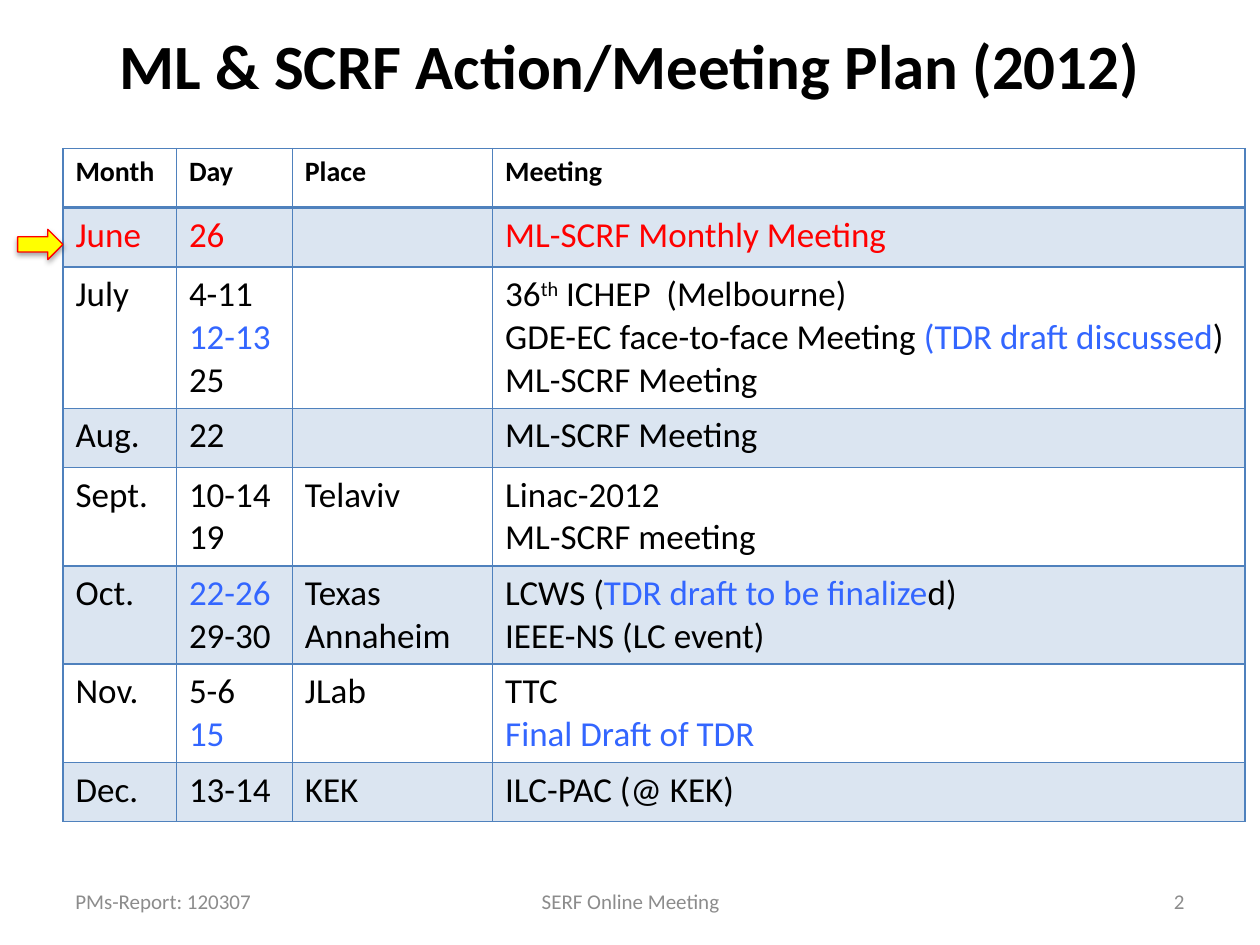
from lxml.etree import SubElement
from pptx import Presentation
from pptx.dml.color import RGBColor
from pptx.enum.shapes import MSO_SHAPE
from pptx.enum.text import MSO_ANCHOR, PP_ALIGN
from pptx.oxml import parse_xml
from pptx.oxml.ns import nsdecls, qn
from pptx.util import Inches, Pt

BLACK = RGBColor(0x00, 0x00, 0x00)
GRAY = RGBColor(0x8C, 0x8C, 0x8C)
RED = RGBColor(0xFF, 0x00, 0x00)
YELLOW = RGBColor(0xFF, 0xFF, 0x00)
HIGHLIGHT = RGBColor(0x33, 0x66, 0xFF)
TABLE_BLUE = RGBColor(0x4F, 0x81, 0xBD)

COLUMN_WIDTHS = [0.9, 0.92, 1.59, 5.97]
ROW_HEIGHT = 0.47


def blue(text):
    """Return a highlighted span."""
    return text, {"color": HIGHLIGHT}


HEADER = ["Month", "Day", "Place", "Meeting"]
CURRENT = ["June", "26", "", "ML-SCRF Monthly Meeting"]
UPCOMING = [
    ["July", ["4-11", [blue("12-13")], "25"], "",
     [["36", ("th", {"baseline": 30}), " ICHEP  (Melbourne)"],
      ["GDE-EC face-to-face Meeting ", blue("(TDR draft discussed"), ")"],
      "ML-SCRF Meeting"]],
    ["Aug.", "22", "", "ML-SCRF Meeting"],
    ["Sept.", ["10-14", "19"], "Telaviv", ["Linac-2012", "ML-SCRF meeting"]],
    ["Oct.", [[blue("22-26")], "29-30"], ["Texas", "Annaheim"],
     [["LCWS (", blue("TDR draft to be finalize"), "d)"], "IEEE-NS (LC event)"]],
    ["Nov.", ["5-6", [blue("15")]], "JLab", ["TTC", [blue("Final Draft of TDR")]]],
    ["Dec.", "13-14", "KEK", "ILC-PAC (@ KEK)"],
]


def write(frame, text, align=PP_ALIGN.LEFT, **style):
    """Write a string, or a list of paragraphs made of spans, into a text frame."""
    lines = [text] if isinstance(text, str) else text
    for index, line in enumerate(lines):
        para = frame.paragraphs[0] if index == 0 else frame.add_paragraph()
        para.alignment = align
        for item in [line] if isinstance(line, str) else line:
            words, changes = (item, {}) if isinstance(item, str) else item
            format_span(para.add_run(), words, **{**style, **changes})


def format_span(span, words, size=20, color=BLACK, bold=False, baseline=0, name="Calibri"):
    """Give one run its words and character format."""
    span.text = words
    span.font.name = name
    span.font.size = Pt(size)
    span.font.bold = bold
    span.font.color.rgb = color
    if baseline:
        span.font._element.set("baseline", str(baseline * 1000))


class SlideBuilder:
    """Holds the current slide and adds each kind of element to it."""

    def __init__(self, deck):
        """Start a slide with the title-only layout."""
        self.slide = deck.slides.add_slide(deck.slide_layouts[5])

    def title(self, text, left, top, width, height):
        """Place and fill the title placeholder."""
        box = self.slide.shapes.title
        box.left, box.top = Inches(left), Inches(top)
        box.width, box.height = Inches(width), Inches(height)
        box.text_frame.vertical_anchor = MSO_ANCHOR.MIDDLE
        write(box.text_frame, text, PP_ALIGN.CENTER, size=36, bold=True)

    def footer(self, text, left, width, align):
        """Add one footer text box."""
        box = self.slide.shapes.add_textbox(Inches(left), Inches(6.95), Inches(width), Inches(0.4))
        box.text_frame.word_wrap = True
        box.text_frame.vertical_anchor = MSO_ANCHOR.MIDDLE
        write(box.text_frame, text, align, size=12, color=GRAY)

    def borders(self, cell, top=1, bottom=1):
        """Draw the four borders of a table cell."""
        properties = cell._tc.get_or_add_tcPr()
        widths = {"lnL": 1, "lnR": 1, "lnT": top, "lnB": bottom}
        for index, (side, points) in enumerate(widths.items()):
            properties.insert(index, parse_xml(
                f'<a:{side} {nsdecls("a")} w="{Pt(points)}"><a:solidFill>'
                f'<a:srgbClr val="{TABLE_BLUE}"/></a:solidFill></a:{side}>'))

    def table(self, rows, styles, left, top):
        """Add the plan table with tinted alternate rows."""
        frame = self.slide.shapes.add_table(
            len(rows), len(COLUMN_WIDTHS), Inches(left), Inches(top),
            Inches(sum(COLUMN_WIDTHS)), Inches(ROW_HEIGHT * len(rows)))
        table = frame.table
        table.horz_banding = table.first_row = False
        for column, width in zip(table.columns, COLUMN_WIDTHS):
            column.width = Inches(width)
        for row_index, (row, style) in enumerate(zip(rows, styles)):
            table.rows[row_index].height = Inches(ROW_HEIGHT)
            for cell, text in zip(table.rows[row_index].cells, row):
                self.borders(cell, 2 if row_index == 1 else 1, 2 if row_index == 0 else 1)
                if row_index % 2:
                    self.tint(cell)
                else:
                    cell.fill.background()
                if text:
                    write(cell.text_frame, text, **style)

    def tint(self, cell):
        """Fill a cell with transparent blue."""
        cell.fill.solid()
        cell.fill.fore_color.rgb = TABLE_BLUE
        color = cell._tc.tcPr.find(qn("a:solidFill")).find(qn("a:srgbClr"))
        SubElement(color, qn("a:alpha")).set("val", "20000")

    def arrow(self, left, top, width, height):
        """Add the marker arrow with its soft shadow."""
        arrow = self.slide.shapes.add_shape(
            MSO_SHAPE.RIGHT_ARROW, Inches(left), Inches(top), Inches(width), Inches(height))
        arrow.fill.solid()
        arrow.fill.fore_color.rgb = YELLOW
        arrow.line.color.rgb = RED
        arrow.line.width = Pt(0.75)
        arrow.shadow.inherit = False
        effects = arrow._element.spPr.find(qn("a:effectLst"))
        effects.append(parse_xml(
            f'<a:outerShdw {nsdecls("a")} blurRad="{Pt(3.1)}" dist="{Pt(1.8)}" dir="5400000" '
            'rotWithShape="0"><a:srgbClr val="000000"><a:alpha val="35000"/></a:srgbClr></a:outerShdw>'))


def main():
    """Build and save the meeting plan."""
    deck = Presentation()
    deck.slide_width, deck.slide_height = Inches(10), Inches(7.5)
    page = SlideBuilder(deck)
    page.title("ML & SCRF Action/Meeting Plan (2012)", 0.5, 0.11, 9, 0.8)
    styles = [{"size": 16, "bold": True}, {"color": RED}] + [{}] * len(UPCOMING)
    page.table([HEADER, CURRENT, *UPCOMING], styles, 0.5, 1.18)
    page.footer("PMs-Report: 120307", 0.5, 2.33, PP_ALIGN.LEFT)
    page.footer("SERF Online Meeting", 3.42, 3.17, PP_ALIGN.CENTER)
    page.footer("2", 7.17, 2.33, PP_ALIGN.RIGHT)
    page.arrow(0.14, 1.82, 0.36, 0.24)
    deck.save("out.pptx")


if __name__ == "__main__":
    main()
